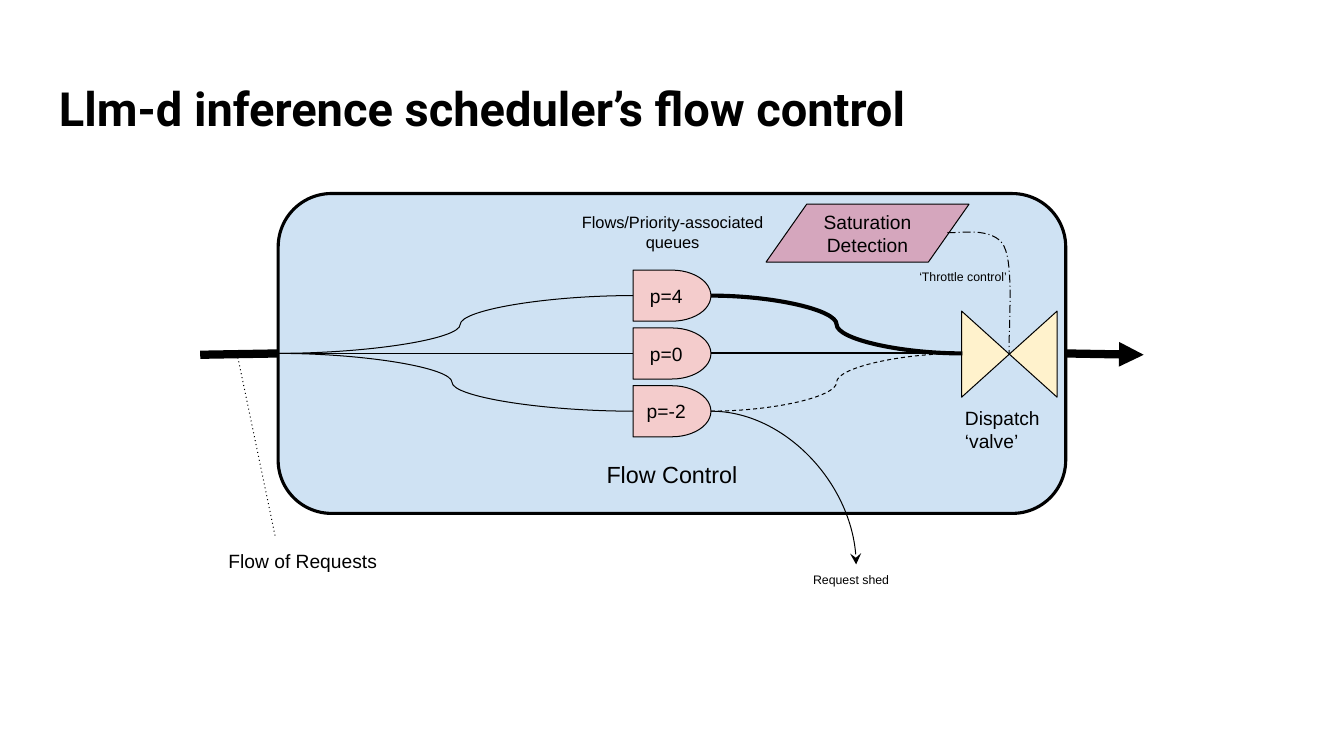
from lxml import etree
from pptx import Presentation
from pptx.dml.color import RGBColor
from pptx.enum import dml, shapes, text
from pptx.oxml.ns import qn
from pptx.util import Inches, Pt

SHAPE, LINK, DASH = shapes.MSO_SHAPE, shapes.MSO_CONNECTOR, dml.MSO_LINE
TOP, MIDDLE, BOTTOM = (text.MSO_ANCHOR.TOP, text.MSO_ANCHOR.MIDDLE,
                       text.MSO_ANCHOR.BOTTOM)
LEFT_SITE, RIGHT_SITE = 1, 3
INK = "000000"
THIN = 0.55

TITLE = "Llm-d inference scheduler’s flow control"
# text, (left, top, width, height), size, centred
LABELS = [
    ("Flow of Requests", (1.63, 4.02, 1.26, 0.32), 10.3, False),
    ("Flows/Priority-associated queues", (4.13, 1.51, 1.75, 0.45), 8.8, True),
    ("Dispatch ‘valve’", (7.11, 2.95, 0.8, 0.5), 10.3, False),
    ("Request shed", (5.98, 4.2, 0.83, 0.26), 6.6, False),
    ("‘Throttle control’", (6.77, 1.95, 0.83, 0.26), 6.6, False),
]
# text, bend of the incoming curve, width and dash of the outgoing line
QUEUES = [
    ("p=4", 0.513, 2.21, None),
    ("p=0", None, 1.1, None),
    ("p=-2", 0.49, THIN, DASH.DASH),
]
FRAME = (2.07, 1.44, 5.86, 2.38)
QUEUE_LEFT, QUEUE_TOP, QUEUE_W, QUEUE_H, QUEUE_PITCH = 4.71, 2.01, 0.58, 0.38, 0.43
FLOW_Y = FRAME[1] + FRAME[3] / 2
FRAME_RIGHT = FRAME[0] + FRAME[2]
QUEUE_RIGHT = QUEUE_LEFT + QUEUE_W
VALVE_LEFT = 7.16
# start point, then Bézier segments of two handles and an end point
THROTTLE_START = (7.05, 1.73)
THROTTLE_CURVES = [
    ((7.12, 1.74), (7.39, 1.68), (7.47, 1.83)),
    ((7.55, 1.98), (7.5, 2.5), (7.51, 2.63)),
]

prs = Presentation()
prs.slide_width = Inches(10)
prs.slide_height = prs.slide_width * 9 // 16
slide = prs.slides.add_slide(prs.slide_layouts[6])


def color(hex_value):
    return RGBColor.from_string(hex_value)


def write(shape, words, size=10.3, font="Arial", bold=False, centred=True,
          anchor=MIDDLE, inset=0.07, grow=False):
    frame = shape.text_frame
    frame.word_wrap = True
    frame.vertical_anchor = anchor
    frame.margin_left = frame.margin_right = Inches(inset)
    frame.margin_top = frame.margin_bottom = Inches(inset)
    if grow:
        frame.auto_size = text.MSO_AUTO_SIZE.SHAPE_TO_FIT_TEXT
    paragraph = frame.paragraphs[0]
    paragraph.alignment = text.PP_ALIGN.CENTER if centred else text.PP_ALIGN.LEFT
    run = paragraph.add_run()
    run.text = words
    run.font.size, run.font.name, run.font.bold = Pt(size), font, bold
    run.font.color.rgb = color(INK)


def stroke(item, width, dash=None):
    item.line.color.rgb = color(INK)
    item.line.width = Pt(width)
    if dash:
        item.line.dash_style = dash


def block(kind, box, fill, width=THIN):
    shape = slide.shapes.add_shape(kind, *map(Inches, box))
    shape.shadow.inherit = False
    shape.fill.solid()
    shape.fill.fore_color.rgb = color(fill)
    stroke(shape, width)
    return shape


def link(start, end, width=THIN, kind=LINK.STRAIGHT, dash=None, head=None,
         bend=None, begin=None, finish=None):
    """Draw a connector; begin and finish are (shape, site) pairs to join."""
    line = slide.shapes.add_connector(kind, *map(Inches, (*start, *end)))
    if begin:
        line.begin_connect(*begin)
    if finish:
        line.end_connect(*finish)
    stroke(line, width, dash)
    properties = line._element.spPr
    etree.SubElement(properties, qn("a:effectLst"))
    if head:
        etree.SubElement(properties.find(qn("a:ln")), qn("a:tailEnd"), type=head)
    if bend is not None:
        guides = properties.find(qn("a:prstGeom")).get_or_add_avLst()
        etree.SubElement(guides, qn("a:gd"), name="adj1",
                         fmla=f"val {round(bend * 100000)}")
    return line


def bezier_points(start, segments, steps=16):
    for first, second, end in segments:
        for step in range(1, steps + 1):
            t = step / steps
            yield tuple(Inches((1 - t) ** 3 * a + 3 * (1 - t) ** 2 * t * b
                               + 3 * (1 - t) * t ** 2 * c + t ** 3 * d)
                        for a, b, c, d in zip(start, first, second, end))
        start = end


title = slide.shapes.add_textbox(*map(Inches, (0.34, 0.49, 9.32, 0.63)))
write(title, TITLE, size=25.2, font="Roboto", bold=True, centred=False,
      anchor=TOP, inset=0.1)

flow_control = block(SHAPE.ROUNDED_RECTANGLE, FRAME, "CFE2F3", 1.66)
write(flow_control, "Flow Control", size=12.5, anchor=BOTTOM)

inlet, outlet = (FRAME[0], FLOW_Y), (FRAME_RIGHT, FLOW_Y)
link(outlet, (8.51, 2.64), 4.42, head="triangle",
     begin=(flow_control, RIGHT_SITE))
link(inlet, (1.49, 2.64), 4.42, begin=(flow_control, LEFT_SITE))
pointer = link((1.77, 2.66), (2.05, 4), dash=DASH.ROUND_DOT)
pointer._element.spPr.find(".//" + qn("a:prstDash")).set("val", "dot")

valve = block(SHAPE.FLOWCHART_COLLATE, (7.19, 2.28, 0.64, 0.71), "FFF2CC")
valve.rotation = 270

for row, (priority, bend, width, dash) in enumerate(QUEUES):
    top = QUEUE_TOP + row * QUEUE_PITCH
    queue_y = top + QUEUE_H / 2
    queue = block(SHAPE.FLOWCHART_DELAY, (QUEUE_LEFT, top, QUEUE_W, QUEUE_H),
                  "F4CCCC")
    write(queue, priority)
    queue_in, queue_out = (QUEUE_LEFT, queue_y), (QUEUE_RIGHT, queue_y)
    valve_in = (VALVE_LEFT, FLOW_Y)
    if bend is None:
        link(inlet, queue_in, begin=(flow_control, LEFT_SITE),
             finish=(queue, LEFT_SITE))
        link(queue_out, valve_in, width, dash=dash, begin=(queue, RIGHT_SITE))
    else:
        link(inlet, queue_in, kind=LINK.CURVE, bend=bend)
        link(queue_out, valve_in, width, kind=LINK.CURVE, dash=dash, bend=0.5)

# The lowest priority queue sheds requests
shed = link(queue_out, (6.37, 4.2), kind=LINK.CURVE, head="stealth")
shed._element.spPr.find(qn("a:prstGeom")).set("prst", "curvedConnector2")

saturation = block(SHAPE.FLOWCHART_DATA, (5.7, 1.52, 1.51, 0.43), "D5A6BD")
write(saturation, "Saturation Detection")

outline = slide.shapes.build_freeform(*map(Inches, THROTTLE_START))
outline.add_line_segments(bezier_points(THROTTLE_START, THROTTLE_CURVES),
                          close=False)
throttle = outline.convert_to_shape()
throttle.shadow.inherit = False
throttle.fill.background()
stroke(throttle, THIN, DASH.LONG_DASH_DOT)

for words, box, size, centred in LABELS:
    label = slide.shapes.add_textbox(*map(Inches, box))
    write(label, words, size=size, centred=centred, anchor=TOP, grow=True)

prs.save("out.pptx")
